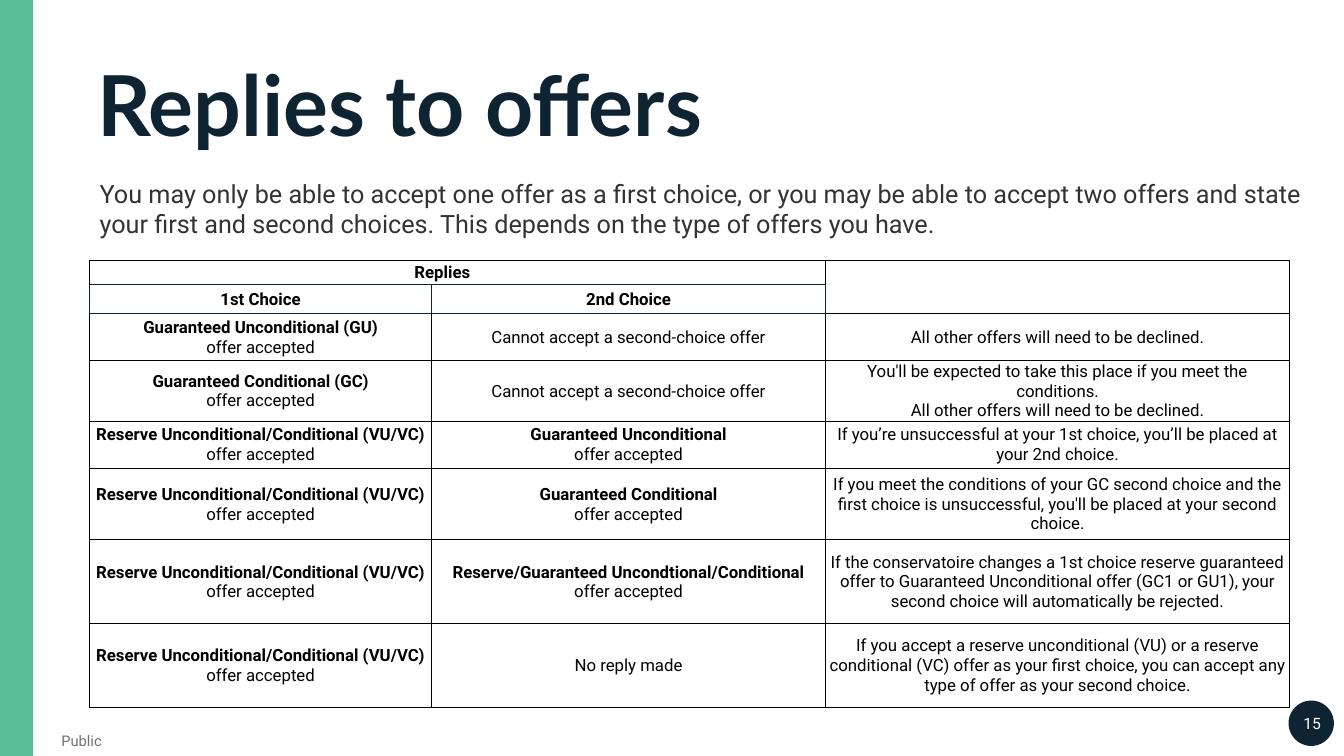
from lxml import etree
from pptx import Presentation
from pptx.dml.color import RGBColor
from pptx.enum.shapes import MSO_SHAPE
from pptx.enum.text import MSO_ANCHOR, MSO_AUTO_SIZE, PP_ALIGN
from pptx.oxml.ns import qn
from pptx.util import Inches, Pt

LEFT, CENTER = PP_ALIGN.LEFT, PP_ALIGN.CENTER
TOP, MIDDLE = MSO_ANCHOR.TOP, MSO_ANCHOR.MIDDLE
NO_FIT = MSO_AUTO_SIZE.NONE
RECTANGLE, OVAL = MSO_SHAPE.RECTANGLE, MSO_SHAPE.OVAL

GREEN, NAVY, WHITE, BLACK = "57BF93", "0E2432", "FFFFFF", "000000"
DARK_GREY, MID_GREY, HEADER_LINE = "333333", "767171", "132433"

TITLE_FONT = {"name": "Lato", "size": Pt(60), "bold": True}
INTRO_FONT = {"name": "Roboto", "size": Pt(18), "bold": False}
LABEL_FONT = {"name": "Roboto", "size": Pt(10.5), "bold": False}
NUMBER_FONT = {"name": "Roboto", "size": Pt(11.2), "bold": False}
CELL_FONT = {"name": "Roboto", "size": Pt(12), "bold": False}

INTRO = (
    "You may only be able to accept one offer as a first choice, or you may be able to accept "
    "two offers and state your first and second choices. This depends on the type of offers you have."
)
ACCEPTED = "offer accepted"
RESERVE = ["Reserve Unconditional/Conditional (VU/VC)", ACCEPTED]
NO_SECOND = ["Cannot accept a second-choice offer"]
DECLINED = "All other offers will need to be declined."
COL_WIDTHS = [3.39, 3.91, 4.6]
ROW_HEIGHTS = [0.24, 0.29, 0.47, 0.47, 0.47, 0.71, 0.83, 0.83]
HEADER_ROWS = 2
REPLIES = [
    [["Replies"], [], []],
    [["1st Choice"], ["2nd Choice"], []],
    [["Guaranteed Unconditional (GU)", ACCEPTED], NO_SECOND, [DECLINED]],
    [["Guaranteed Conditional (GC)", ACCEPTED], NO_SECOND,
     ["You'll be expected to take this place if you meet the conditions.", DECLINED]],
    [RESERVE, ["Guaranteed Unconditional", ACCEPTED],
     ["If you’re unsuccessful at your 1st choice, you’ll be placed at your 2nd choice."]],
    [RESERVE, ["Guaranteed Conditional", ACCEPTED],
     ["If you meet the conditions of your GC second choice and the first choice is "
      "unsuccessful, you'll be placed at your second choice."]],
    [RESERVE, ["Reserve/Guaranteed Uncondtional/Conditional", ACCEPTED],
     ["If the conservatoire changes a 1st choice reserve guaranteed offer to Guaranteed "
      "Unconditional offer (GC1 or GU1), your second choice will automatically be rejected."]],
    [RESERVE, ["No reply made"],
     ["If you accept a reserve unconditional (VU) or a reserve conditional (VC) offer as your "
      "first choice, you can accept any type of offer as your second choice."]],
]


def rgb(value):
    """Turn a hex string into a colour."""
    return RGBColor.from_string(value)


def set_margins(target, margins):
    """Set left, top, right and bottom margins in inches."""
    for side, value in zip(("left", "top", "right", "bottom"), margins):
        setattr(target, f"margin_{side}", Inches(value))


def add_run(p, text, font, color):
    """Add a run formatted from a dict of font values."""
    r = p.add_run()
    r.text = text
    for name, value in font.items():
        setattr(r.font, name, value)
    r.font.color.rgb = rgb(color)


def fill_text(sp, text, font, color, margins, anchor=TOP, **paragraph):
    """Write one formatted paragraph into a shape."""
    tf = sp.text_frame
    for name, value in {"word_wrap": True, "auto_size": NO_FIT, "vertical_anchor": anchor}.items():
        setattr(tf, name, value)
    set_margins(tf, margins)
    p = tf.paragraphs[0]
    for name, value in {"alignment": LEFT, **paragraph}.items():
        setattr(p, name, value)
    add_run(p, text, font, color)


def place(sp, box):
    """Move and size a shape to a box in inches."""
    for name, value in zip(("left", "top", "width", "height"), box):
        setattr(sp, name, Inches(value))


def add_solid(s, kind, box, color):
    """Add a flat filled shape without outline."""
    sp = s.shapes.add_shape(kind, *map(Inches, box))
    sp.shadow.inherit = False
    sp.fill.solid()
    sp.fill.fore_color.rgb = rgb(color)
    sp.line.fill.background()
    return sp


def add_title(s, box):
    """Place the slide title."""
    sp = s.shapes.title
    place(sp, box)
    fill_text(sp, "Replies to offers", TITLE_FONT, NAVY, (0, 0.12, 0, 0.12), line_spacing=0.8)


def add_label(s, box):
    """Place the classification label in the body placeholder."""
    sp = s.placeholders[1]
    place(sp, box)
    pPr = sp.text_frame.paragraphs[0]._p.get_or_add_pPr()
    pPr.set("marL", "0")
    pPr.set("indent", "0")
    etree.SubElement(pPr, qn("a:buNone"))
    fill_text(sp, "Public", LABEL_FONT, MID_GREY, (0.28, 0.08, 0.1, 0.05), MIDDLE,
              line_spacing=0.9, space_before=Pt(0))


def add_intro(s, box):
    """Add the introductory text."""
    sp = s.shapes.add_textbox(*map(Inches, box))
    fill_text(sp, INTRO, INTRO_FONT, DARK_GREY, (0.1, 0.05, 0.1, 0.05))


def add_page_number(s, box):
    """Add the round page number badge."""
    sp = add_solid(s, OVAL, box, NAVY)
    fill_text(sp, "15", NUMBER_FONT, WHITE, (0.03, 0.04, 0.01, 0.04), MIDDLE, alignment=CENTER)


def add_borders(cell, row, col):
    """Draw the cell borders, heavier around the choice headings."""
    tcPr = cell._tc.get_or_add_tcPr()
    for side in "LRTB":
        heavy = col < 2 and (row == 1 or (row, side) in ((0, "B"), (2, "T")))
        color, width = (HEADER_LINE, 1) if heavy else (BLACK, 0.5)
        ln = etree.SubElement(tcPr, qn(f"a:ln{side}"), w=str(Pt(width)))
        fill = etree.SubElement(ln, qn("a:solidFill"))
        etree.SubElement(fill, qn("a:srgbClr"), val=color)


def fill_cell(cell, row, col, lines):
    """Format one cell and write its lines."""
    add_borders(cell, row, col)
    cell.fill.background()
    cell.vertical_anchor = MIDDLE
    set_margins(cell, (0.01, 0.01, 0.01, 0))
    tf = cell.text_frame
    if not lines:
        tf.paragraphs[0]._p.get_or_add_endParaRPr().set("sz", "1200")
    for i, line in enumerate(lines):
        p = tf.add_paragraph() if i else tf.paragraphs[0]
        p.alignment = CENTER
        bold = row < HEADER_ROWS or lines[i + 1:] == [ACCEPTED]
        add_run(p, line, {**CELL_FONT, "bold": bold}, BLACK)


def add_replies_table(s, box):
    """Add the table of replies and their outcomes."""
    frame = s.shapes.add_table(len(ROW_HEIGHTS), len(COL_WIDTHS), *map(Inches, box))
    table = frame.table
    table.first_row = table.horz_banding = False
    for column, width in zip(table.columns, COL_WIDTHS):
        column.width = Inches(width)
    for row, height in zip(table.rows, ROW_HEIGHTS):
        row.height = Inches(height)
    for row, texts in enumerate(REPLIES):
        for col, lines in enumerate(texts):
            fill_cell(table.cell(row, col), row, col, lines)
    heading = table.cell(0, 0)
    heading.merge(table.cell(0, 1))
    heading.margin_left = Inches(3.22)
    heading.text_frame.paragraphs[0].alignment = LEFT
    table.cell(0, 2).merge(table.cell(1, 2))


def add_replies_slide(prs):
    """Build the slide on replies to offers."""
    s = prs.slides.add_slide(prs.slide_layouts[1])
    add_solid(s, RECTANGLE, (0, 0, 0.33, 7.5), GREEN)
    add_page_number(s, (12.78, 6.95, 0.45, 0.45))
    add_title(s, (0.97, 0.59, 12.36, 1.05))
    add_label(s, (0.33, 7.24, 2.27, 0.2))
    add_replies_table(s, (0.89, 2.58, sum(COL_WIDTHS), sum(ROW_HEIGHTS)))
    add_intro(s, (0.89, 1.72, 12.23, 0.71))


def main():
    """Create and save the presentation."""
    prs = Presentation()
    prs.slide_width, prs.slide_height = Inches(13.33), Inches(7.5)
    add_replies_slide(prs)
    prs.save("out.pptx")


if __name__ == "__main__":
    main()
